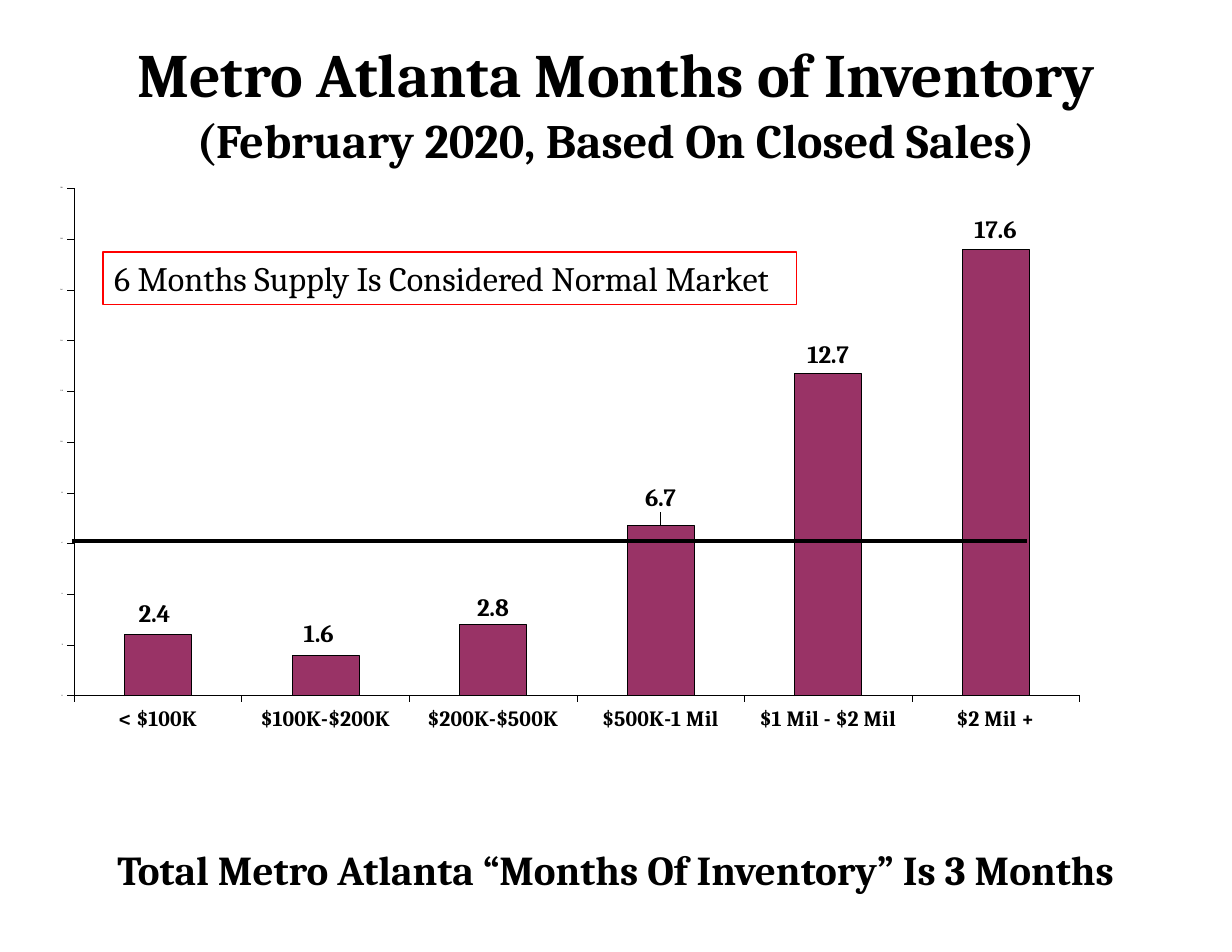
from dataclasses import dataclass

from lxml.etree import SubElement
from pptx import Presentation
from pptx.chart.data import CategoryChartData
from pptx.dml.color import RGBColor
from pptx.enum.chart import XL_CHART_TYPE as ChartType
from pptx.enum.chart import XL_LABEL_POSITION as LabelPos
from pptx.enum.chart import XL_TICK_LABEL_POSITION as TickLabelPos
from pptx.enum.chart import XL_TICK_MARK as TickMark
from pptx.enum.shapes import MSO_CONNECTOR as Connector
from pptx.enum.shapes import MSO_SHAPE as Shape
from pptx.enum.text import MSO_ANCHOR as Anchor
from pptx.enum.text import MSO_AUTO_SIZE as AutoSize
from pptx.enum.text import PP_ALIGN as Align
from pptx.oxml import parse_xml
from pptx.oxml.ns import nsdecls, qn
from pptx.util import Inches, Pt

FONT = "Cambria"
BLACK, RED, PLUM = "000000", "FF0000", "993366"


@dataclass
class PriceBand:
    name: str
    months: float
    label_shift: tuple[float, float] | None = None  # share of chart size


BANDS = [
    PriceBand("< $100K", 2.4, (-0.003, -0.003)),
    PriceBand("$100K-$200K", 1.6, (-0.006, -0.003)),
    PriceBand("$200K-$500K", 2.8, (0, 0.004)),
    PriceBand("$500K-1 Mil", 6.7, (0, -0.013)),
    PriceBand("$1 Mil - $2 Mil", 12.7),
    PriceBand("$2 Mil +", 17.6),
]


def color(value: str) -> RGBColor:
    return RGBColor.from_string(value)


def style_font(font, size: float, bold: bool = True) -> None:
    font.name, font.size, font.bold = FONT, Pt(size), bold
    font.color.rgb = color(BLACK)


def style_line(line, value: str, width: float) -> None:
    line.color.rgb = color(value)
    line.width = Pt(width)


def place(shape, left: float, top: float, width: float, height: float) -> None:
    shape.left, shape.top = Inches(left), Inches(top)
    shape.width, shape.height = Inches(width), Inches(height)


def manual_layout(x: float, y: float, size: tuple[float, float] | None = None):
    """Return a chart layout: a shift, or an inner plot frame if size is given."""
    layout = parse_xml(f"<c:layout {nsdecls('c')}><c:manualLayout/></c:layout>")
    values = {"x": x, "y": y}
    if size:
        values = {"layoutTarget": "inner", "xMode": "edge", "yMode": "edge",
                  **values, "w": size[0], "h": size[1]}
    for tag, value in values.items():
        SubElement(layout[0], qn(f"c:{tag}")).set("val", str(value))
    return layout


def style_axis(axis, size: float) -> None:
    axis.has_major_gridlines = False
    axis.major_tick_mark = TickMark.OUTSIDE
    axis.minor_tick_mark = TickMark.NONE
    style_font(axis.tick_labels.font, size)
    style_line(axis.format.line, BLACK, 0.02)


def add_inventory_chart(slide) -> None:
    data = CategoryChartData()
    data.categories = [band.name for band in BANDS]
    data.add_series("Series 1", [band.months for band in BANDS])
    chart = slide.shapes.add_chart(
        ChartType.COLUMN_CLUSTERED, Inches(0.54), Inches(1.47),
        Inches(9.93), Inches(6.22), data).chart
    chart.has_legend = chart.has_title = False
    style_font(chart.font, 1.2)

    # Axes
    style_axis(chart.category_axis, 14)
    chart.category_axis.tick_label_position = TickLabelPos.LOW
    months_axis = chart.value_axis
    style_axis(months_axis, 1.2)
    months_axis.minimum_scale, months_axis.maximum_scale = 0, 20
    months_axis.major_unit = 2

    # Columns
    plot = chart.plots[0]
    plot.gap_width = 150
    plot.vary_by_categories = False
    columns = plot.series[0]
    columns.format.fill.solid()
    columns.format.fill.fore_color.rgb = color(PLUM)
    style_line(columns.format.line, BLACK, 0.06)

    # Value labels, some nudged by hand
    labels = columns.data_labels
    labels.show_value = True
    labels.position = LabelPos.OUTSIDE_END
    style_font(labels.font, 16)
    for index, band in enumerate(BANDS):
        if band.label_shift:
            label = columns.points[index].data_label
            style_font(label.font, 16)
            label.position = LabelPos.OUTSIDE_END
    for element in columns.data_labels._element.findall(qn("c:dLbl")):
        index = element.find(qn("c:idx"))
        index.addnext(manual_layout(*BANDS[int(index.get("val"))].label_shift))

    # Plot frame
    plot_area = chart._chartSpace.chart.plotArea
    for old in plot_area.findall(qn("c:layout")):
        plot_area.remove(old)
    plot_area.insert(0, manual_layout(0.01, 0.034, (0.906, 0.728)))


def add_normal_line(slide) -> None:
    normal = slide.shapes.add_connector(
        Connector.STRAIGHT, Inches(0.64), Inches(4.83), Inches(9.17), Inches(4.83))
    style_line(normal.line, BLACK, 2.25)
    SubElement(normal._element.spPr, qn("a:effectLst"))


def add_title(slide) -> None:
    title = slide.shapes.title
    place(title, 0, 0.68, 11, 0.46)
    frame = title.text_frame
    frame.auto_size = AutoSize.NONE
    frame.vertical_anchor = Anchor.MIDDLE
    heading = frame.paragraphs[0]
    heading.text = "Metro Atlanta Months of Inventory\v(February 2020, Based On Closed Sales)"
    heading.alignment = Align.CENTER
    for run, size in zip(heading.runs, (39.6, 30.8)):
        style_font(run.font, size)


def add_total(slide) -> None:
    total = slide.shapes.add_textbox(Inches(0), Inches(7.37), Inches(11), Inches(0.64))
    frame = total.text_frame
    frame.word_wrap = True
    frame.margin_top = Inches(0.22)
    frame.text = "Total Metro Atlanta “Months Of Inventory” Is 3 Months"
    sentence = frame.paragraphs[0]
    sentence.alignment = Align.CENTER
    sentence.line_spacing = 0.9
    style_font(sentence.runs[0].font, 26.4)


def add_market_note(slide) -> None:
    note = slide.shapes.add_shape(
        Shape.RECTANGLE, Inches(0.92), Inches(2.25), Inches(6.19), Inches(0.47))
    note.shadow.inherit = False
    note.fill.background()
    style_line(note.line, RED, 0.75)
    frame = note.text_frame
    frame.word_wrap = True
    frame.vertical_anchor = Anchor.TOP
    frame.text = "6 Months Supply Is Considered Normal Market"
    frame.paragraphs[0].alignment = Align.LEFT
    style_font(frame.paragraphs[0].runs[0].font, 22, bold=False)


def main() -> None:
    deck = Presentation()
    deck.slide_width, deck.slide_height = Inches(11), Inches(8.5)
    slide = deck.slides.add_slide(deck.slide_layouts[5])
    add_inventory_chart(slide)
    add_normal_line(slide)
    add_title(slide)
    add_total(slide)
    add_market_note(slide)
    deck.save("out.pptx")


if __name__ == "__main__":
    main()
